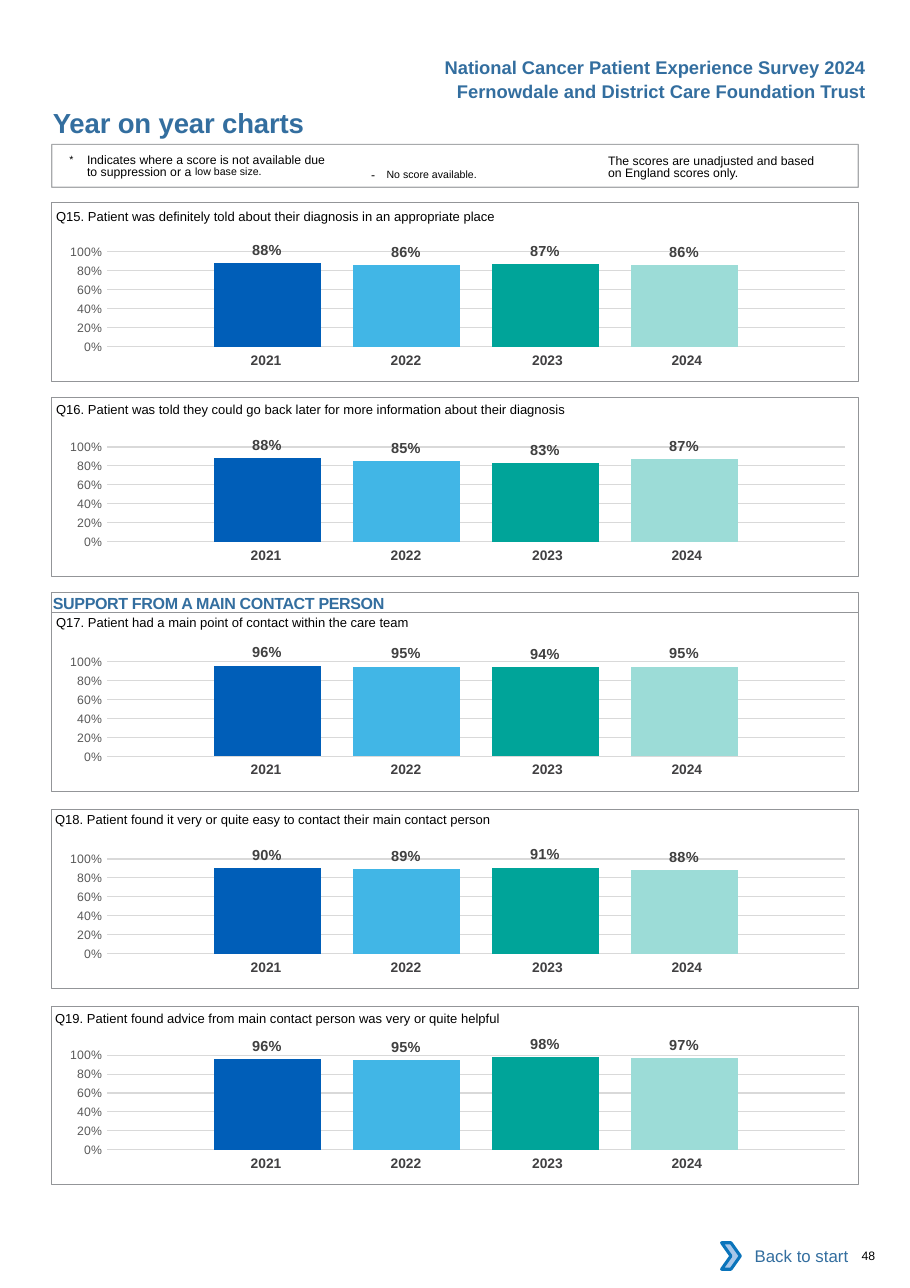
from lxml import etree
from pptx import Presentation
from pptx.chart.data import CategoryChartData
from pptx.dml.color import RGBColor
from pptx.enum import chart as charts, shapes, text
from pptx.oxml import parse_xml
from pptx.oxml.ns import nsdecls, qn
from pptx.util import Inches, Pt

COLOURS = {
    "heading": "336E9F", "black": "000000", "white": "FFFFFF", "frame": "939598",
    "year": "414042", "label": "404040", "axis": "595959", "grid": "D9D9D9",
    "arrow": "A8C7E9", "arrow_line": "0A74BB",
    "bars": ["005EB8", "41B6E6", "00A499", "9CDCD7"],
}
YEARS = ["2021", "2022", "2023", "2024"]
YEAR_WIDTHS = [1.27, 1.27, 1.34, 1.27]
YEAR_RIGHT_MARGINS = [0, 0, 0.04, 0.12]
QUESTIONS = [
    ("Q15. Patient was definitely told about their diagnosis in an appropriate place",
     0.51, 1.80, 1.84, [0.88, 0.86, 0.87, 0.86]),
    ("Q16. Patient was told they could go back later for more information about their diagnosis",
     0.51, 3.55, 3.61, [0.88, 0.85, 0.83, 0.87]),
    ("Q17. Patient had a main point of contact within the care team",
     0.51, 5.49, 5.56, [0.96, 0.95, 0.94, 0.95]),
    ("Q18. Patient found it very or quite easy to contact their main contact person",
     0.5, 7.28, 7.35, [0.90, 0.89, 0.91, 0.88]),
    ("Q19. Patient found advice from main contact person was very or quite helpful",
     0.5, 9.08, 9.13, [0.96, 0.95, 0.98, 0.97]),
]
SURVEY_LINES = [
    ("National Cancer Patient Experience Survey 2024", 0.46),
    ("Fernowdale and District Care Foundation Trust", 0.68),
]
SUPPRESSION_NOTE = [
    ("*\t", {"size": 12, "baseline": 3}),
    ("Indicates where a score is not available due to suppression or a ", {}),
    ("low base size.", {"size": 12, "baseline": 7}),
]
NO_SCORE_NOTE = [
    ("- ", {"spacing": 2.6}),
    ("No score available.", {"size": 12, "baseline": 3}),
]
UNADJUSTED_NOTE = "The scores are unadjusted and based on England scores only."
FRAME_LEFT, FRAME_WIDTH, FRAME_HEIGHT = 0.47, 7.32, 1.62
CHART_OFFSET, YEARS_OFFSET = 0.26, 1.31
PLOT_AREA = {"x": 0.079, "y": 0.145, "w": 0.915, "h": 0.666}


def colour(value):
    return RGBColor.from_string(value)


def style_font(font, size, hex_colour, bold=False):
    font.name = "Arial"
    font.size = Pt(size)
    font.bold = bold
    font.color.rgb = colour(hex_colour)


def write_text(frame, content, size=8.5, ink=COLOURS["black"], bold=False, align="LEFT",
               anchor="TOP", margins=(0, 0, 0, 0), line=None, hanging=0, spacing=None):
    frame.word_wrap = True
    frame.vertical_anchor = text.MSO_ANCHOR[anchor]
    frame.margin_left, frame.margin_top, frame.margin_right, frame.margin_bottom = map(Inches, margins)
    paragraph = frame.paragraphs[0]
    paragraph.alignment = text.PP_ALIGN[align]
    if line:
        paragraph.line_spacing = Pt(line)
    if hanging:
        properties = paragraph._p.get_or_add_pPr()
        properties.set("marL", str(Inches(hanging)))
        properties.set("indent", str(-Inches(hanging)))
    pieces = [(content, {})] if isinstance(content, str) else content
    for words, own in pieces:
        run = paragraph.add_run()
        run.text = words
        style_font(run.font, own.get("size", size), ink, bold)
        run_properties = run._r.get_or_add_rPr()
        gap = own.get("spacing", spacing)
        if gap:
            run_properties.set("spc", str(round(gap * 100)))
        if "baseline" in own:
            run_properties.set("baseline", str(own["baseline"] * 1000))


def add_text(slide, content, left, top, width, height, **text_format):
    box = slide.shapes.add_textbox(*map(Inches, (left, top, width, height)))
    write_text(box.text_frame, content, **text_format)


def add_block(slide, left, top, width, height, kind="RECTANGLE", fill=None, line=None, weight=0.5):
    shape = slide.shapes.add_shape(shapes.MSO_SHAPE[kind], *map(Inches, (left, top, width, height)))
    shape.shadow.inherit = False
    if fill:
        shape.fill.solid()
        shape.fill.fore_color.rgb = colour(fill)
    else:
        shape.fill.background()
    if line:
        shape.line.color.rgb = colour(line)
        shape.line.width = Pt(weight)
    else:
        shape.line.fill.background()
    return shape


def add_years(slide, top):
    box = map(Inches, (1.73, top, sum(YEAR_WIDTHS), 0.27))
    table = slide.shapes.add_table(1, len(YEARS), *box).table
    table.first_row = table.horz_banding = False
    for index, (year, width, right) in enumerate(zip(YEARS, YEAR_WIDTHS, YEAR_RIGHT_MARGINS)):
        table.columns[index].width = Inches(width)
        cell = table.cell(0, index)
        cell.fill.background()
        write_text(cell.text_frame, year, size=9, ink=COLOURS["year"], bold=True, align="CENTER")
        cell.margin_left, cell.margin_right = Inches(0.1), Inches(right)
        cell.margin_top = cell.margin_bottom = Inches(0.05)


def add_scores(slide, top, scores):
    data = CategoryChartData(number_format="0%")
    data.categories = ["1"]
    for number, score in enumerate(scores, 1):
        data.add_series(f"Series {number}", [score])
    chart = slide.shapes.add_chart(charts.XL_CHART_TYPE.COLUMN_CLUSTERED,
                                   *map(Inches, (0.39, top, 7.32, 1.29)), data).chart
    chart.has_legend = chart.has_title = False
    chart.font.name, chart.font.size = "Calibri", Pt(10)
    chart.font.color.rgb = colour(COLOURS["black"])
    chart._chartSpace.find(qn("c:txPr")).addprevious(parse_xml(
        f'<c:spPr {nsdecls("c", "a")}><a:noFill/><a:ln><a:noFill/></a:ln></c:spPr>'))
    chart.category_axis.visible = False
    axis = chart.value_axis
    axis.minimum_scale, axis.maximum_scale, axis.major_unit = 0, 1, 0.2
    axis.major_tick_mark = axis.minor_tick_mark = charts.XL_TICK_MARK.NONE
    axis.format.line.fill.background()
    axis.major_gridlines.format.line.color.rgb = colour(COLOURS["grid"])
    axis.major_gridlines.format.line.width = Pt(0.75)
    axis.tick_labels.number_format = "0%"
    axis.tick_labels.number_format_is_linked = False
    style_font(axis.tick_labels.font, 8, COLOURS["axis"])
    plot = chart.plots[0]
    plot.gap_width, plot.overlap, plot.vary_by_categories = 200, -30, False
    for series, bar_colour in zip(plot.series, COLOURS["bars"]):
        series.format.fill.solid()
        series.format.fill.fore_color.rgb = colour(bar_colour)
        labels = series.data_labels
        labels.show_value = True
        labels.position = charts.XL_LABEL_POSITION.OUTSIDE_END
        labels.number_format, labels.number_format_is_linked = "0%", False
        style_font(labels.font, 9.5, COLOURS["label"], True)
    area = chart._chartSpace.chart.plotArea
    for old_layout in area.findall(qn("c:layout")):
        area.remove(old_layout)
    modes = '<c:layoutTarget val="inner"/><c:xMode val="edge"/><c:yMode val="edge"/>'
    sizes = "".join(f'<c:{name} val="{value}"/>' for name, value in PLOT_AREA.items())
    area.insert(0, parse_xml(f'<c:layout {nsdecls("c")}><c:manualLayout>{modes}{sizes}'
                             '</c:manualLayout></c:layout>'))


def main():
    presentation = Presentation()
    presentation.slide_width, presentation.slide_height = Inches(8.26), Inches(11.69)
    slide = presentation.slides.add_slide(presentation.slide_layouts[6])
    heading = {"ink": COLOURS["heading"], "bold": True}

    add_text(slide, "Year on year charts", 0.48, 0.96, 4.5, 0.3, size=18, spacing=-0.1, **heading)
    for line, top in SURVEY_LINES:
        add_text(slide, line, 3.56, top, 4.4, 0.3, size=12, align="RIGHT",
                 margins=(0.1, 0.05, 0.1, 0.05), **heading)

    for question, left, question_top, frame_top, scores in QUESTIONS:
        add_years(slide, frame_top + YEARS_OFFSET)
        add_scores(slide, frame_top + CHART_OFFSET, scores)
        add_block(slide, FRAME_LEFT, frame_top, FRAME_WIDTH, FRAME_HEIGHT, line=COLOURS["frame"])
        add_text(slide, question, left, question_top, 7.2, 0.24, margins=(0, 0.09, 0, 0))

    section = add_block(slide, FRAME_LEFT, 5.38, FRAME_WIDTH, 0.18, line=COLOURS["frame"])
    write_text(section.text_frame, "SUPPORT FROM A MAIN CONTACT PERSON", size=10.5,
               margins=(0.01, 0.01, 0, 0), spacing=-0.2, **heading)

    add_text(slide, UNADJUSTED_NOTE, 5.52, 1.38, 2.01, 0.27, size=8, line=8.1,
             margins=(0, 0.03, 0, 0))
    add_text(slide, NO_SCORE_NOTE, 3.27, 1.41, 1.83, 0.24, size=8, margins=(0.1, 0.05, 0.1, 0.05))
    add_text(slide, SUPPRESSION_NOTE, 0.63, 1.38, 2.38, 0.27, size=8, line=8.1, hanging=0.16,
             margins=(0, 0.03, 0, 0))
    notes = add_block(slide, FRAME_LEFT, 1.31, FRAME_WIDTH, 0.39, line=COLOURS["frame"], weight=0.75)
    line_colour = notes.line._ln.find(".//" + qn("a:srgbClr"))
    etree.SubElement(line_colour, qn("a:alpha")).set("val", "80000")

    button = add_block(slide, 6.62, 11.19, 1.18, 0.42, fill=COLOURS["white"])
    write_text(button.text_frame, "Back to start", size=11, ink=COLOURS["heading"], align="RIGHT",
               anchor="MIDDLE", margins=(0.1, 0.05, 0.1, 0.05))
    add_block(slide, 6.55, 11.28, 0.17, 0.24, kind="CHEVRON", fill=COLOURS["arrow"],
              line=COLOURS["arrow_line"], weight=2)
    add_text(slide, "48", 7.82, 11.33, 0.41, 0.13, size=8)
    presentation.save("out.pptx")


if __name__ == "__main__":
    main()
